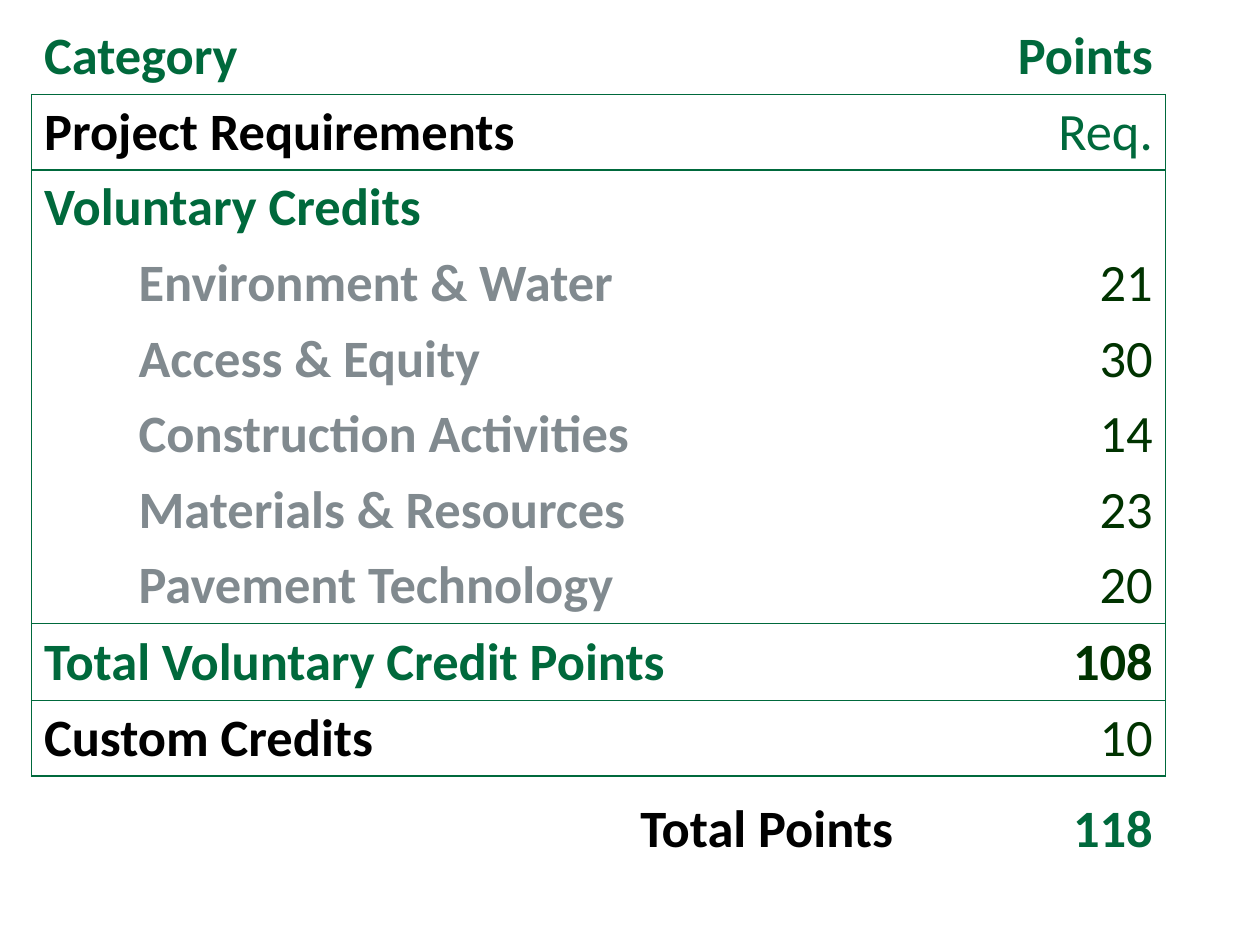
from lxml import etree
from pptx import Presentation
from pptx.dml.color import RGBColor
from pptx.enum.text import MSO_ANCHOR, PP_ALIGN
from pptx.oxml.ns import qn
from pptx.util import Inches, Pt

LEFT, RIGHT = PP_ALIGN.LEFT, PP_ALIGN.RIGHT
MIDDLE = MSO_ANCHOR.MIDDLE
COLORS = {"green": "00693C", "dark": "003300", "gray": "818A8F",
          "black": "000000", "white": "FFFFFF"}
CELL_FORMAT = {"margin_left": Inches(0.1), "margin_right": Inches(0.1),
               "margin_top": Inches(0.04), "margin_bottom": Inches(0.04),
               "vertical_anchor": MIDDLE}
TABLE_FLAGS = {"first_row": False, "horz_banding": False}
COLUMN_WIDTHS = [6.94, 2.06]
ROW_HEIGHTS = [0.6] * 8 + [0.61, 0.6, 0.85]
RULED_ROWS = {1, 2, 8, 9, 10}
INDENT = Inches(0.75)

CREDITS = [("Environment & Water", "21"), ("Access & Equity", "30"),
           ("Construction Activities", "14"), ("Materials & Resources", "23"),
           ("Pavement Technology", "20")]
ROWS = [
    (("Category", "green", True), ("Points", "green", True)),
    (("Project Requirements", "black", True), ("Req.", "green", False)),
    (("Voluntary Credits", "green", True), ("", "dark", False)),
    *[((name, "gray", True), (points, "dark", False)) for name, points in CREDITS],
    (("Total Voluntary Credit Points", "green", True), ("108", "dark", True)),
    (("Custom Credits", "black", True), ("10", "dark", False)),
    (("Total Points", "black", True), ("118", "green", True)),
]
LAST_ROW = len(ROWS) - 1


def apply_format(target, values):
    for name, value in values.items():
        setattr(target, name, value)


def set_borders(cell, row, column):
    boxed = 0 < row < LAST_ROW
    sides = {"L": boxed and column == 0, "R": boxed and column == 1,
             "T": row in RULED_ROWS, "B": row + 1 in RULED_ROWS}
    properties = cell._tc.get_or_add_tcPr()
    for side, visible in sides.items():
        border = etree.SubElement(properties, qn(f"a:ln{side}"), w=str(Pt(1)))
        if visible:
            paint = etree.SubElement(border, qn("a:solidFill"))
            etree.SubElement(paint, qn("a:srgbClr"), val=COLORS["green"])
        else:
            etree.SubElement(border, qn("a:noFill"))


def set_fill(cell, row):
    if row == LAST_ROW:
        cell.fill.background()
    else:
        cell.fill.solid()
        cell.fill.fore_color.rgb = RGBColor.from_string(COLORS["white"])


def write_text(cell, text, color, bold, alignment, indented):
    paragraph = cell.text_frame.paragraphs[0]
    paragraph.alignment = alignment
    if indented:
        paragraph._p.get_or_add_pPr().set("marL", str(INDENT))
    if text:
        run = paragraph.add_run()
        run.text = text
        apply_format(run.font, {"name": "Calibri", "size": Pt(30), "bold": bold})
        run.font.color.rgb = RGBColor.from_string(COLORS[color])


def add_points_table(slide):
    frame = slide.shapes.add_table(
        len(ROWS), len(COLUMN_WIDTHS), Inches(0.25), Inches(0.15),
        Inches(sum(COLUMN_WIDTHS)), Inches(sum(ROW_HEIGHTS)))
    table = frame.table
    apply_format(table, TABLE_FLAGS)
    for column, width in zip(table.columns, COLUMN_WIDTHS):
        column.width = Inches(width)
    for table_row, height in zip(table.rows, ROW_HEIGHTS):
        table_row.height = Inches(height)
    for row, entries in enumerate(ROWS):
        for column, (text, color, bold) in enumerate(entries):
            cell = table.cell(row, column)
            alignment = RIGHT if column == 1 or row == LAST_ROW else LEFT
            apply_format(cell, CELL_FORMAT)
            set_borders(cell, row, column)
            set_fill(cell, row)
            write_text(cell, text, color, bold, alignment, color == "gray")


def main():
    presentation = Presentation()
    apply_format(presentation, {"slide_width": Inches(10), "slide_height": Inches(7.5)})
    slide = presentation.slides.add_slide(presentation.slide_layouts[6])
    add_points_table(slide)
    presentation.save("out.pptx")


if __name__ == "__main__":
    main()
